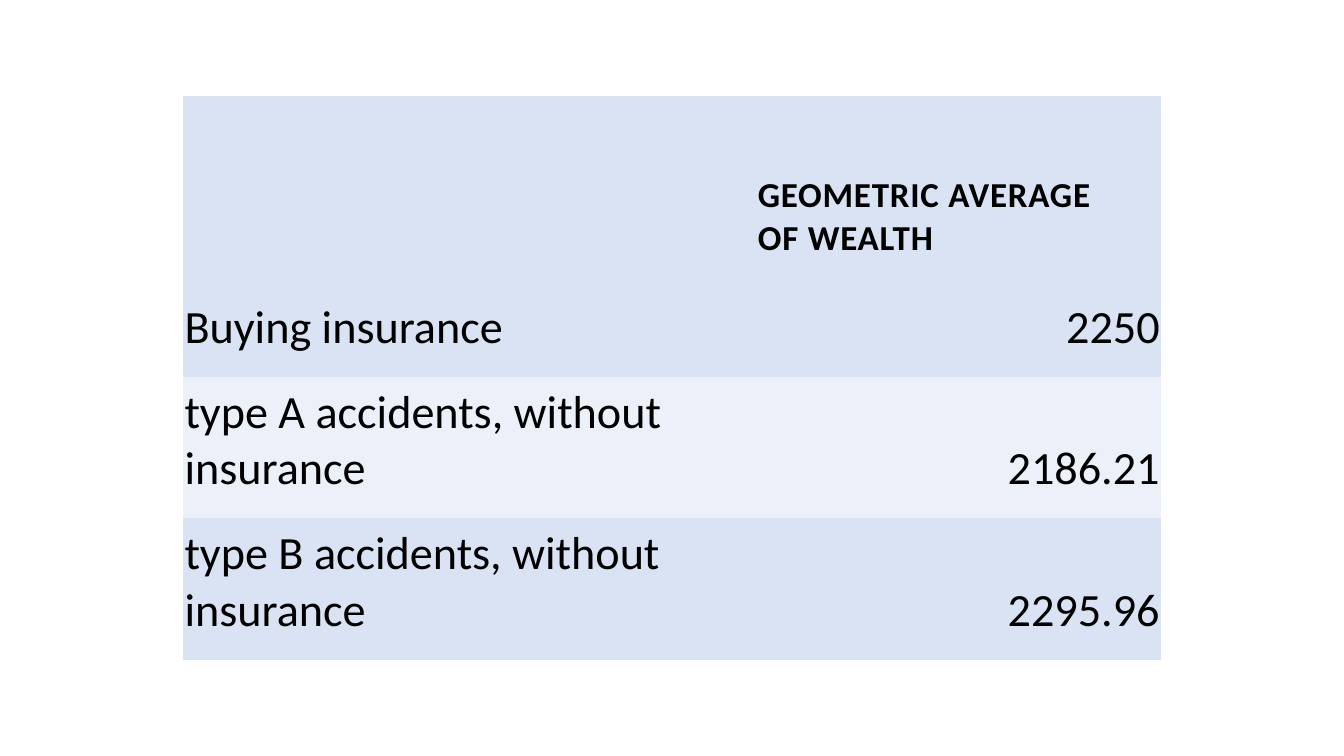
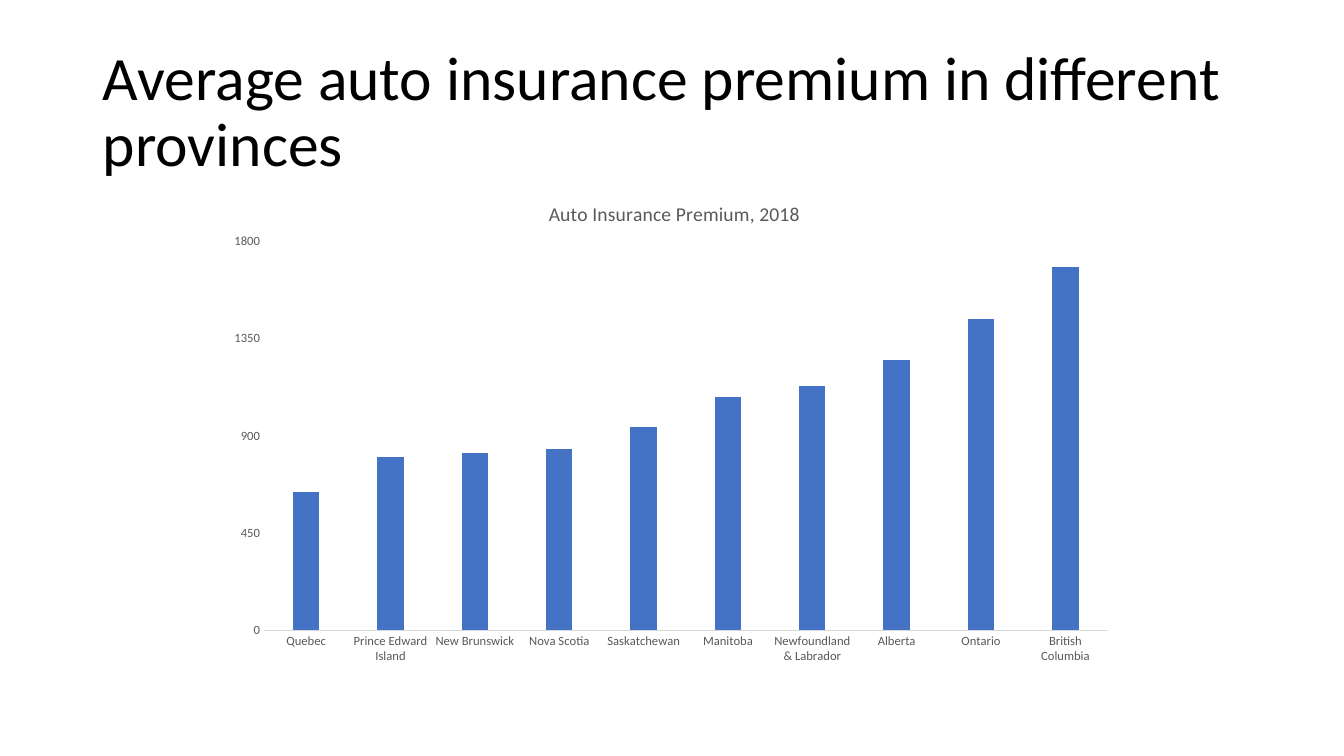
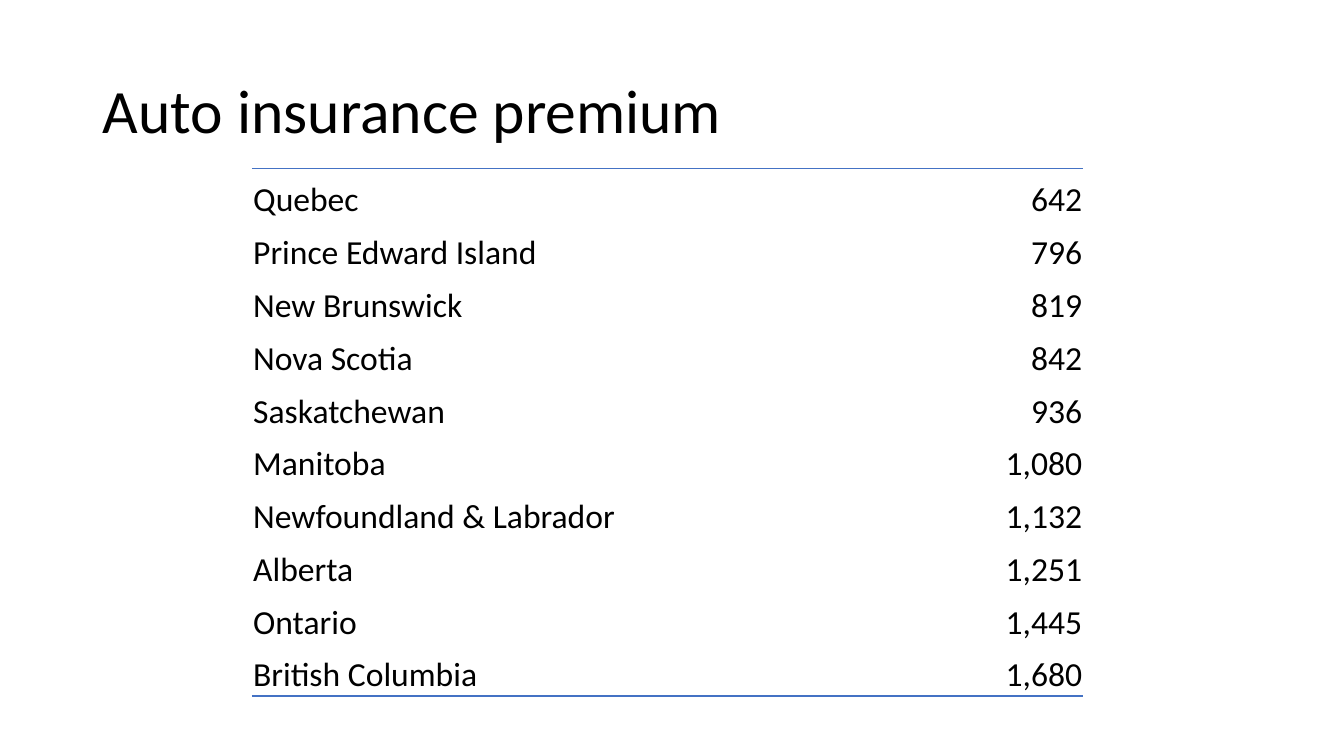
from lxml import etree
from pptx import Presentation
from pptx.chart import data as cd
from pptx.dml import color
from pptx.enum import chart as ch, text as tx
from pptx.oxml import ns, parse_xml
from pptx.util import Cm, Pt

FONT = "Calibri"
BLACK, GREY, PALE_GREY = "000000", "595959", "D9D9D9"
BLUE, BAND, LIGHT_BAND = "4472C4", "DAE3F3", "ECF1F9"
NO_STYLE = "{2D5ABB26-0587-4C30-8999-92F81FD0307C}"
TITLE_ONLY, BLANK = 5, 6
LEFT, RIGHT = tx.PP_ALIGN.LEFT, tx.PP_ALIGN.RIGHT

PREMIUMS = {
    "Quebec": 642,
    "Prince Edward Island": 796,
    "New Brunswick": 819,
    "Nova Scotia": 842,
    "Saskatchewan": 936,
    "Manitoba": 1080,
    "Newfoundland & Labrador": 1132,
    "Alberta": 1251,
    "Ontario": 1445,
    "British Columbia": 1680,
}
WEALTH = [
    ("", "GEOMETRIC AVERAGE OF WEALTH"),
    ("Buying insurance", "2250"),
    ("type A accidents, without insurance", "2186.21"),
    ("type B accidents, without insurance", "2295.96"),
]


def rgb(hex_color):
    return color.RGBColor.from_string(hex_color)


def set_font(font, size, hex_color=BLACK, bold=False):
    font.name, font.size, font.bold = FONT, Pt(size), bold
    font.color.rgb = rgb(hex_color)


def write(tf, text, size, hex_color=BLACK, bold=False, align=LEFT,
          line_spacing=None, tracking=None):
    """Put one formatted paragraph in a text frame; tracking is in points."""
    p = tf.paragraphs[0]
    p.alignment = align
    if line_spacing:
        p.line_spacing = line_spacing
    r = p.add_run()
    r.text = text
    set_font(r.font, size, hex_color, bold)
    if tracking:
        r.font._element.set("spc", str(round(tracking * 100)))


def add_title(s, text):
    sp = s.shapes.title
    sp.left, sp.top, sp.width, sp.height = Cm(2.34), Cm(1.02), Cm(29.21), Cm(3.68)
    tf = sp.text_frame
    tf.word_wrap = True
    tf.auto_size = tx.MSO_AUTO_SIZE.NONE
    tf.vertical_anchor = tx.MSO_ANCHOR.MIDDLE
    write(tf, text, 44, line_spacing=0.9)


def add_plain_table(s, left, top, widths, heights):
    """Add a table without style, sized in centimetres."""
    table = s.shapes.add_table(len(heights), len(widths), Cm(left), Cm(top),
                               Cm(sum(widths)), Cm(sum(heights))).table
    table.first_row = table.horz_banding = False
    table._tbl.tblPr.find(ns.qn("a:tableStyleId")).text = NO_STYLE
    for column, width in zip(table.columns, widths):
        column.width = Cm(width)
    for row, height in zip(table.rows, heights):
        row.height = Cm(height)
    return table


def fill_cell(cell, text, fill=None, side=0.03, top=0.03, bottom=0, **format):
    cell.vertical_anchor = tx.MSO_ANCHOR.BOTTOM
    cell.margin_left = cell.margin_right = Cm(side)
    cell.margin_top, cell.margin_bottom = Cm(top), Cm(bottom)
    if fill:
        cell.fill.solid()
        cell.fill.fore_color.rgb = rgb(fill)
    else:
        cell.fill.background()
    if text:
        write(cell.text_frame, text, **format)


def rule_row(row, edge):
    """Draw a blue line on the row's edge, "T" or "B"."""
    for cell in row.cells:
        cell._tc.get_or_add_tcPr().insert(0, parse_xml(
            f'<a:ln{edge} {ns.nsdecls("a")} w="12700"><a:solidFill>'
            f'<a:srgbClr val="{BLUE}"/></a:solidFill></a:ln{edge}>'))


def place(parent, before, **layout):
    """Give a chart part a manual layout, ahead of the child named before."""
    box = etree.Element(ns.qn("c:layout"))
    manual = etree.SubElement(box, ns.qn("c:manualLayout"))
    for name, value in layout.items():
        etree.SubElement(manual, ns.qn(f"c:{name}")).set("val", str(value))
    for old in parent.findall(ns.qn("c:layout")):
        parent.remove(old)
    parent.find(ns.qn(before)).addprevious(box)


def style_axis(axis):
    axis.has_major_gridlines = False
    axis.major_tick_mark = axis.minor_tick_mark = ch.XL_TICK_MARK.NONE
    set_font(axis.tick_labels.font, 9, GREY)


def add_premium_chart(s):
    data = cd.CategoryChartData()
    data.categories = list(PREMIUMS)
    data.add_series("Series 1", [round(v, -1) for v in PREMIUMS.values()])
    chart = s.shapes.add_chart(ch.XL_CHART_TYPE.COLUMN_CLUSTERED, Cm(5.51), Cm(4.45),
                               Cm(22.86), Cm(12.57), data).chart
    set_font(chart.font, 10)
    chart.has_legend = False
    chart.has_title = True
    write(chart.chart_title.text_frame, "Auto Insurance Premium, 2018", 14, GREY,
          align=tx.PP_ALIGN.CENTER)
    chart.chart_title.include_in_layout = False
    place(chart.chart_title._element, "c:overlay",
          xMode="edge", yMode="edge", x=0.36, y=0.04)
    place(chart.plots[0]._element.getparent(), "c:barChart", layoutTarget="inner",
          xMode="edge", yMode="edge", x=0.05, y=0.13, w=0.93, h=0.78)

    plot = chart.plots[0]
    plot.vary_by_categories = False
    plot.gap_width, plot.overlap = 219, -27
    bars = plot.series[0].format.fill
    bars.solid()
    bars.fore_color.rgb = rgb(BLUE)

    provinces, dollars = chart.category_axis, chart.value_axis
    style_axis(provinces)
    provinces.format.line.color.rgb = rgb(PALE_GREY)
    provinces.format.line.width = Pt(0.75)
    style_axis(dollars)
    dollars.format.line.fill.background()
    dollars.minimum_scale, dollars.maximum_scale, dollars.major_unit = 0, 1800, 450


def add_wealth_table(s):
    table = add_plain_table(s, 4.62, 2.41, [13.69, 10.95], [4.93, 2.16, 3.56, 3.56])
    for i, texts in enumerate(WEALTH):
        for cell, text, align in zip(table.rows[i].cells, texts, (LEFT, RIGHT)):
            if i == 0:
                fill_cell(cell, text, BAND, side=0.79, top=0.79, bottom=0.79,
                          size=25, bold=True, tracking=0.6)
            else:
                fill_cell(cell, text, LIGHT_BAND if i == 2 else BAND, bottom=0.53,
                          size=33, align=align)


def add_premium_table(s):
    table = add_plain_table(s, 6.35, 4.24, [11.96, 8.99], [1.33] * len(PREMIUMS))
    for row, (province, premium) in zip(table.rows, PREMIUMS.items()):
        fill_cell(row.cells[0], province, size=24)
        fill_cell(row.cells[1], f"{premium:,}", size=24, align=RIGHT)
    rule_row(table.rows[0], "T")
    rule_row(table.rows[len(PREMIUMS) - 1], "B")


def main():
    prs = Presentation()
    prs.slide_width, prs.slide_height = Cm(33.87), Cm(19.05)

    add_wealth_table(prs.slides.add_slide(prs.slide_layouts[BLANK]))

    s = prs.slides.add_slide(prs.slide_layouts[TITLE_ONLY])
    add_title(s, "Average auto insurance premium in different provinces")
    add_premium_chart(s)

    s = prs.slides.add_slide(prs.slide_layouts[TITLE_ONLY])
    add_title(s, "Auto insurance premium")
    add_premium_table(s)

    prs.save("out.pptx")


if __name__ == "__main__":
    main()
